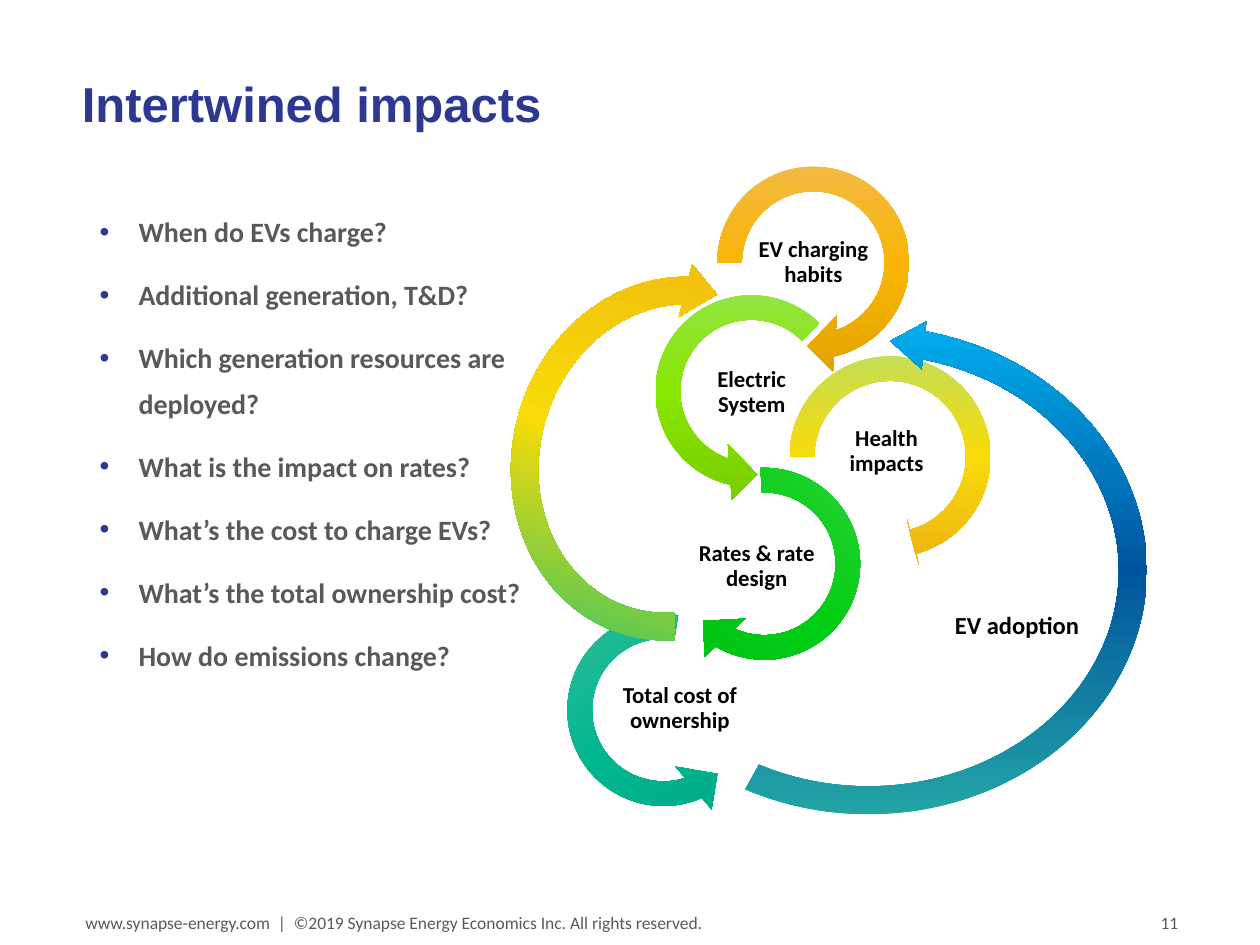
from copy import deepcopy

from lxml.etree import SubElement
from pptx import Presentation
from pptx.dml.color import RGBColor
from pptx.enum.shapes import MSO_SHAPE
from pptx.enum.text import MSO_ANCHOR, MSO_AUTO_SIZE, PP_ALIGN
from pptx.oxml.ns import qn
from pptx.util import Inches, Pt

COLORS = {
    "navy": "2D3991",
    "gray": "595959",
    "black": "000000",
}
GRADIENTS = {
    "orange": ("F2BA4C", "F9B606", "E3A400"),
    "lime": ("94E54B", "88E601", "79CD00"),
    "green": ("4BD24D", "00CE14", "00B712"),
    "teal": ("4BBF9B", "00B68F", "00A27F"),
    "health": ("C0DE5E", "F8DB08", "EEB111"),
    "feedback": ("0DBF77", "F8DB08", "EEB111"),
    "adoption": ("24A8A5", "00549E", "00B0F0"),
}
QUESTIONS = [
    "When do EVs charge?",
    "Additional generation, T&D?",
    "Which generation resources are deployed?",
    "What is the impact on rates?",
    "What’s the cost to charge EVs?",
    "What’s the total ownership cost?",
    "How do emissions change?",
]
RIGHT_TURN = (0.11, 11.42, 45, 108, 0.125)
LEFT_TURN = (0.11, 11.42, 63, 189, 0.125)
LOWER_TURN = (0.11, 11.42, 45, 135, 0.125)
HEALTH_TURN = (0.11, 0.26, 45, 108, 0.105)
FEEDBACK_TURN = (0.078, 6.49, 46.64, 152.71, 0.077)
ADOPTION_TURN = (0.055, 5.05, 45.64, 144.42, 0.047)
LOOP = 1.77


class ImpactSlide:
    """Builds the slide's elements in one shared style."""

    def __init__(self, slide):
        self.slide = slide

    def place(self, shape, left, top, width, height):
        shape.left, shape.top = Inches(left), Inches(top)
        shape.width, shape.height = Inches(width), Inches(height)

    def style(self, paragraph, size, color, bold=True, font="Calibri"):
        for run in paragraph.runs:
            run.font.name = font
            run.font.size = Pt(size)
            run.font.bold = bold
            run.font.color.rgb = RGBColor.from_string(COLORS[color])

    def title(self, text, *box):
        heading = self.slide.shapes.title
        self.place(heading, *box)
        frame = heading.text_frame
        frame.text = text
        frame.auto_size = MSO_AUTO_SIZE.NONE
        frame.vertical_anchor = MSO_ANCHOR.BOTTOM
        paragraph = frame.paragraphs[0]
        paragraph.alignment = PP_ALIGN.LEFT
        paragraph.line_spacing = 0.9
        self.style(paragraph, 28, "navy", font="Arial")

    def bullets(self, items, *box):
        body = self.slide.placeholders[1]
        self.place(body, *box)
        frame = body.text_frame
        frame.text = "\n".join(items)
        frame.auto_size = MSO_AUTO_SIZE.NONE
        for index, paragraph in enumerate(frame.paragraphs):
            properties = paragraph._p.get_or_add_pPr()
            properties.set("marL", str(Inches(0.31)))
            properties.set("indent", str(-Inches(0.31)))
            bullet_color = SubElement(properties, qn("a:buClr"))
            SubElement(bullet_color, qn("a:srgbClr"), val=COLORS["navy"])
            SubElement(properties, qn("a:buFont"), typeface="Arial")
            SubElement(properties, qn("a:buChar"), char="•")
            paragraph.line_spacing = Pt(26)
            paragraph.space_before = Pt(10 if index else 0)
            self.style(paragraph, 16, "gray")

    def arrow(self, kind, box, turn, gradient, rotation=0, flipped=False):
        loop = self.slide.shapes.add_shape(kind, *map(Inches, box))
        loop.shadow.inherit = False
        loop.rotation = rotation
        if flipped:
            loop._element.spPr.get_or_add_xfrm().set("flipH", "1")
        for index, value in enumerate(turn):
            loop.adjustments[index] = value
        loop.line.fill.background()
        loop.fill.gradient()
        loop.fill.gradient_angle = 270
        stops = loop._element.spPr.find(".//" + qn("a:gsLst"))
        stops.insert(1, deepcopy(stops[0]))
        for index, stop in enumerate(loop.fill.gradient_stops):
            stop.position = index / 2
            stop.color.rgb = RGBColor.from_string(GRADIENTS[gradient][index])

    def text(self, words, box, size, color, bold=True, align=PP_ALIGN.LEFT,
             anchor=MSO_ANCHOR.MIDDLE):
        frame = self.slide.shapes.add_textbox(*map(Inches, box)).text_frame
        frame.word_wrap = True
        frame.vertical_anchor = anchor
        frame.text = words
        paragraph = frame.paragraphs[0]
        paragraph.alignment = align
        self.style(paragraph, size, color, bold)
        return frame

    def label(self, words, left, top):
        frame = self.text(words, (left, top, 0.99, 0.49), 13, "black",
                          align=PP_ALIGN.CENTER)
        frame.margin_left = frame.margin_right = Inches(0.01)
        frame.margin_top = frame.margin_bottom = Inches(0.01)
        frame.paragraphs[0].line_spacing = 0.9


def main():
    deck = Presentation()
    deck.slide_width, deck.slide_height = Inches(10), Inches(7.5)
    impacts = ImpactSlide(deck.slides.add_slide(deck.slide_layouts[1]))
    clockwise = MSO_SHAPE.CIRCULAR_ARROW
    counter = MSO_SHAPE.LEFT_CIRCULAR_ARROW

    impacts.title("Intertwined impacts", 0.55, 0.4, 6.93, 0.71)
    impacts.bullets(QUESTIONS, 0.69, 1.56, 3.61, 5.1)

    for kind, left, top, turn, gradient, rotation in [
        (clockwise, 5.57, 1.2, RIGHT_TURN, "orange", 0),
        (counter, 5.08, 2.22, LEFT_TURN, "lime", 0),
        (clockwise, 5.18, 3.59, LOWER_TURN, "green", 42.9),
        (counter, 4.38, 4.75, LEFT_TURN, "teal", 323.8),
        (clockwise, 6.18, 2.74, HEALTH_TURN, "health", 0),
    ]:
        impacts.arrow(kind, (left, top, LOOP, LOOP), turn, gradient, rotation)
    impacts.arrow(clockwise, (3.96, 2.08, 2.8, 3.12), FEEDBACK_TURN,
                  "feedback", 195.7)
    impacts.arrow(clockwise, (4.6, 2.51, 4.58, 4.03), ADOPTION_TURN,
                  "adoption", 180, flipped=True)

    for words, left, top in [
        ("EV charging habits", 5.96, 1.84),
        ("Electric System", 5.47, 2.87),
        ("Rates & rate design", 5.51, 4.25),
        ("Total cost of ownership", 4.9, 5.38),
        ("Health impacts", 6.54, 3.34),
    ]:
        impacts.label(words, left, top)
    impacts.text("EV adoption", (7.48, 4.79, 1.77, 0.34), 14, "black",
                 anchor=MSO_ANCHOR.TOP)

    impacts.text("www.synapse-energy.com  |  ©2019 Synapse Energy Economics "
                 "Inc. All rights reserved.", (0.58, 7.11, 6.1, 0.43), 10,
                 "gray", bold=False)
    impacts.text("11", (9.02, 7.11, 0.43, 0.43), 10, "gray", bold=False,
                 align=PP_ALIGN.RIGHT)
    deck.save("out.pptx")


if __name__ == "__main__":
    main()
